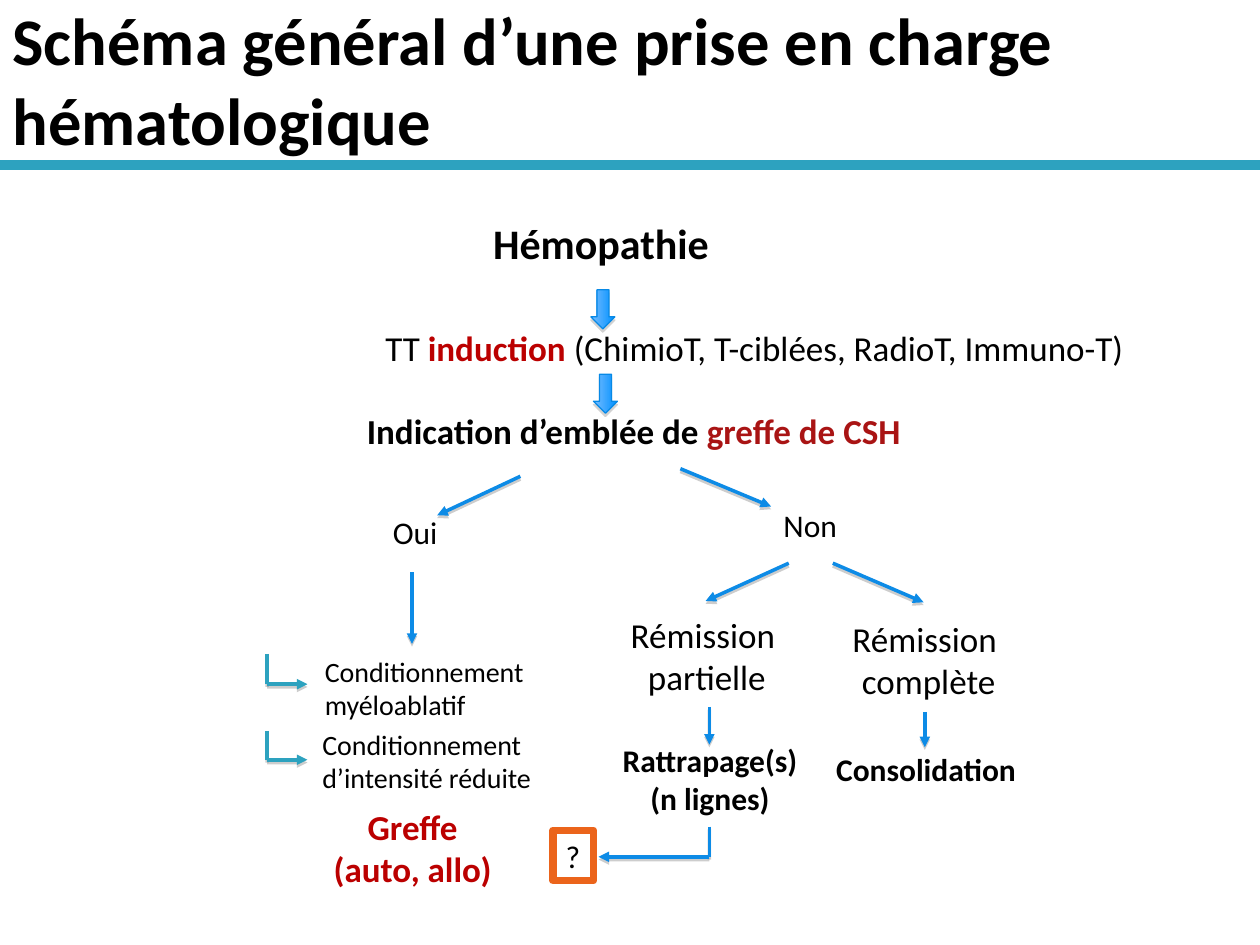
import pptx
import pptx.util
import pptx.dml.color
import pptx.enum.shapes
import pptx.enum.text
import pptx.oxml
import pptx.oxml.ns
from dataclasses import dataclass
from typing import Any, Optional

Inches = pptx.util.Inches
Pt = pptx.util.Pt
RGB = pptx.dml.color.RGBColor
Kind = pptx.enum.shapes.MSO_SHAPE
Align = pptx.enum.text.PP_ALIGN
Anchor = pptx.enum.text.MSO_ANCHOR

FONT = "Calibri"
BLACK = RGB(0, 0, 0)
WHITE = RGB(0xFF, 0xFF, 0xFF)
RED = RGB(0xBB, 0, 0)
DARK_RED = RGB(0xA9, 0x14, 0x14)
TEAL = RGB(0x2D, 0xA2, 0xBF)
BLUE = RGB(0x0D, 0x8B, 0xE6)
EDGE = RGB(0x07, 0x89, 0xE6)
LIGHT = RGB(0x77, 0xBD, 0xFF)
DEEP = RGB(0, 0x90, 0xFF)
ORANGE = RGB(0xEB, 0x64, 0x1B)


@dataclass
class Run:
    text: str
    color: RGB = BLACK
    bold: bool = False


@dataclass
class Label:
    at: tuple[float, float, float, float]
    size: int
    lines: list[list[Run]]
    center: bool = True
    wrap: bool = False
    middle: bool = False


@dataclass
class Arrow:
    points: list[tuple[float, float]]
    color: RGB = BLUE


def lines(*texts: str, color: RGB = BLACK, bold: bool = False) -> list[list[Run]]:
    return [[Run(text, color, bold)] for text in texts]


LABELS = [
    Label((3.03, 1.68, 3.48, 0.5), 24, lines("Hémopathie", bold=True), wrap=True),
    Label((2.87, 2.54, 6.3, 0.43), 20,
          [[Run("TT"), Run(" induction ", RED, True),
            Run("(ChimioT, T-ciblées, RadioT, Immuno-T) ")]], wrap=True),
    Label((2.4, 3.2, 5.26, 0.43), 20,
          [[Run("Indication d’emblée de ", bold=True),
            Run("greffe de CSH", DARK_RED, True)]], wrap=True),
    Label((3.02, 4.02, 0.56, 0.4), 18, lines("Oui"), center=False),
    Label((6.12, 3.97, 0.63, 0.4), 18, lines("Non"), center=False),
    Label((2.48, 5.14, 1.8, 0.64), 16, lines("Conditionnement", "myéloablatif"),
          center=False, middle=True),
    Label((2.46, 5.72, 1.88, 0.64), 16,
          lines("Conditionnement", "d’intensité réduite"), center=False, middle=True),
    Label((2.54, 6.34, 1.47, 0.77), 20,
          lines("Greffe", "(auto, allo)", color=RED, bold=True)),
    Label((4.9, 4.82, 1.42, 0.77), 20, lines("Rémission ", "partielle")),
    Label((6.66, 4.85, 1.42, 0.77), 20, lines("Rémission ", "complète")),
    Label((4.83, 5.83, 1.61, 0.71), 18,
          lines("Rattrapage(s)", "(n lignes)", bold=True)),
    Label((6.53, 5.9, 1.64, 0.4), 18, lines("Consolidation", bold=True)),
]
DOUBT = Label((4.39, 6.59, 0.32, 0.4), 18, lines("?"), center=False)

ARROWS = [
    Arrow([(4.13, 3.78), (3.47, 4.09)]),
    Arrow([(5.4, 3.72), (6.12, 4.02)]),
    Arrow([(6.26, 4.47), (5.6, 4.77)]),
    Arrow([(6.61, 4.47), (7.33, 4.78)]),
    Arrow([(5.63, 5.61), (5.63, 5.91)]),
    Arrow([(7.34, 5.65), (7.34, 5.93)]),
    Arrow([(3.27, 4.54), (3.27, 5.11)]),
    Arrow([(2.12, 5.19), (2.12, 5.43), (2.44, 5.43)], TEAL),
    Arrow([(2.12, 5.8), (2.12, 6.03), (2.44, 6.03)], TEAL),
    Arrow([(5.63, 6.56), (5.63, 6.8), (4.75, 6.8)]),
]
BLOCKS = [(4.63, 2.36), (4.65, 3.03)]


def add_run(para: Any, run: Run, size: int) -> None:
    part = para.add_run()
    part.text = run.text
    font = part.font
    font.name, font.size, font.bold = FONT, Pt(size), run.bold
    font.color.rgb = run.color


def write(frame: Any, label: Label) -> None:
    frame.word_wrap = label.wrap
    frame.auto_size = pptx.enum.text.MSO_AUTO_SIZE.SHAPE_TO_FIT_TEXT
    frame.vertical_anchor = Anchor.MIDDLE if label.middle else Anchor.TOP
    for i, runs in enumerate(label.lines):
        para = frame.add_paragraph() if i else frame.paragraphs[0]
        para.alignment = Align.CENTER if label.center else Align.LEFT
        for run in runs:
            add_run(para, run, label.size)


def add_label(shapes: Any, label: Label) -> None:
    box = shapes.add_textbox(*map(Inches, label.at))
    write(box.text_frame, label)


def set_shade(shape: Any, dist: Optional[float] = None, alpha: int = 0) -> None:
    """Give a soft drop shadow, or none when no distance is set."""
    shade = "" if dist is None else (
        f'<a:outerShdw blurRad="0" dist="{Pt(dist)}" dir="5400000" rotWithShape="0">'
        f'<a:srgbClr val="808080"><a:alpha val="{alpha * 1000}"/></a:srgbClr>'
        '</a:outerShdw>')
    names = pptx.oxml.ns.nsdecls("a")
    shape._element.spPr.append(
        pptx.oxml.parse_xml(f"<a:effectLst {names}>{shade}</a:effectLst>"))


def add_line(shapes: Any, start: tuple[float, float], end: tuple[float, float],
             color: RGB, width: float) -> Any:
    line = shapes.add_connector(pptx.enum.shapes.MSO_CONNECTOR.STRAIGHT,
                                *map(Inches, (*start, *end)))
    line.line.color.rgb = color
    line.line.width = Pt(width)
    return line


def add_arrow(shapes: Any, arrow: Arrow) -> None:
    """Draw the legs; bent arrows are grouped and the last leg has the head."""
    home = shapes.add_group_shape().shapes if len(arrow.points) > 2 else shapes
    for start, end in zip(arrow.points, arrow.points[1:]):
        leg = add_line(home, start, end, arrow.color, 2)
        if end == arrow.points[-1]:
            names = pptx.oxml.ns.nsdecls("a")
            leg.line._get_or_add_ln().append(
                pptx.oxml.parse_xml(f'<a:tailEnd {names} type="triangle"/>'))
        set_shade(leg, 1.6, 38)


def add_block(shapes: Any, left: float, top: float) -> None:
    block = shapes.add_shape(Kind.RIGHT_ARROW, Inches(left), Inches(top),
                             Inches(0.31), Inches(0.19))
    block.rotation = 90
    block.fill.gradient()
    block.fill.gradient_angle = 90
    for stop, color, spot in zip(block.fill.gradient_stops, (LIGHT, DEEP), (0, 1)):
        stop.color.rgb = color
        stop.position = spot
    block.line.color.rgb = EDGE
    block.line.width = Pt(0.75)
    set_shade(block, 1.8, 35)


def main() -> None:
    deck = pptx.Presentation()
    deck.slide_width, deck.slide_height = Inches(10), Inches(7.5)
    slide = deck.slides.add_slide(deck.slide_layouts[5])
    shapes = slide.shapes

    # Title and rule
    title = shapes.title
    title.left, title.top = Inches(0), Inches(0)
    title.width, title.height = Inches(10), Inches(1.25)
    frame = title.text_frame
    frame.auto_size = pptx.enum.text.MSO_AUTO_SIZE.NONE
    frame.vertical_anchor = Anchor.MIDDLE
    frame.paragraphs[0].alignment = Align.LEFT
    add_run(frame.paragraphs[0],
            Run("Schéma général d’une prise en charge hématologique", bold=True), 38)
    set_shade(add_line(shapes, (0, 1.31), (10, 1.31), TEAL, 6))

    # Steps
    for label in LABELS:
        add_label(shapes, label)

    # Arrows
    for left, top in BLOCKS:
        add_block(shapes, left, top)
    for arrow in ARROWS:
        add_arrow(shapes, arrow)

    # Question box
    box = shapes.add_shape(Kind.RECTANGLE, *map(Inches, DOUBT.at))
    box.shadow.inherit = False
    box.fill.solid()
    box.fill.fore_color.rgb = WHITE
    box.line.color.rgb = ORANGE
    box.line.width = Pt(4.33)
    write(box.text_frame, DOUBT)

    deck.save("out.pptx")


if __name__ == "__main__":
    main()
